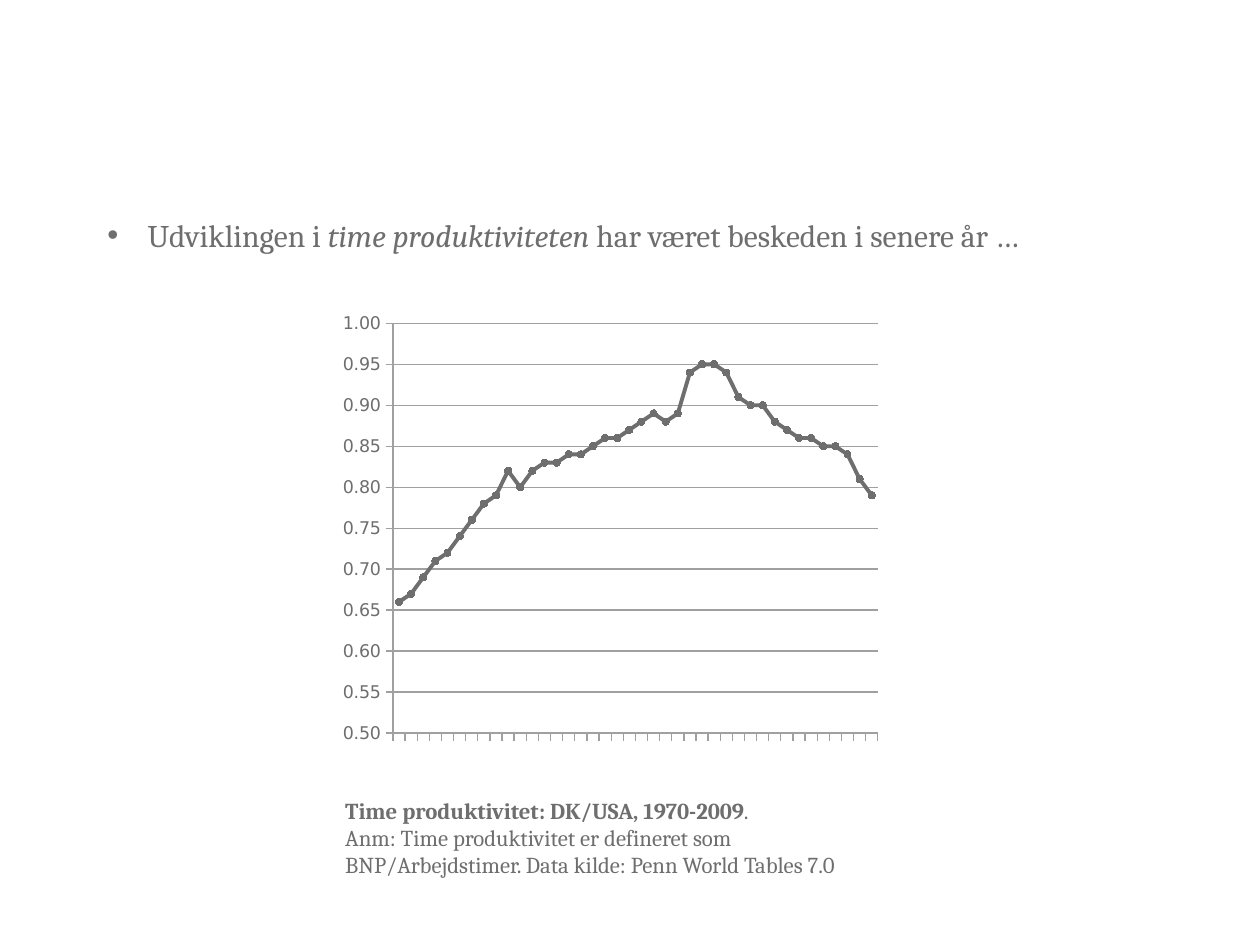
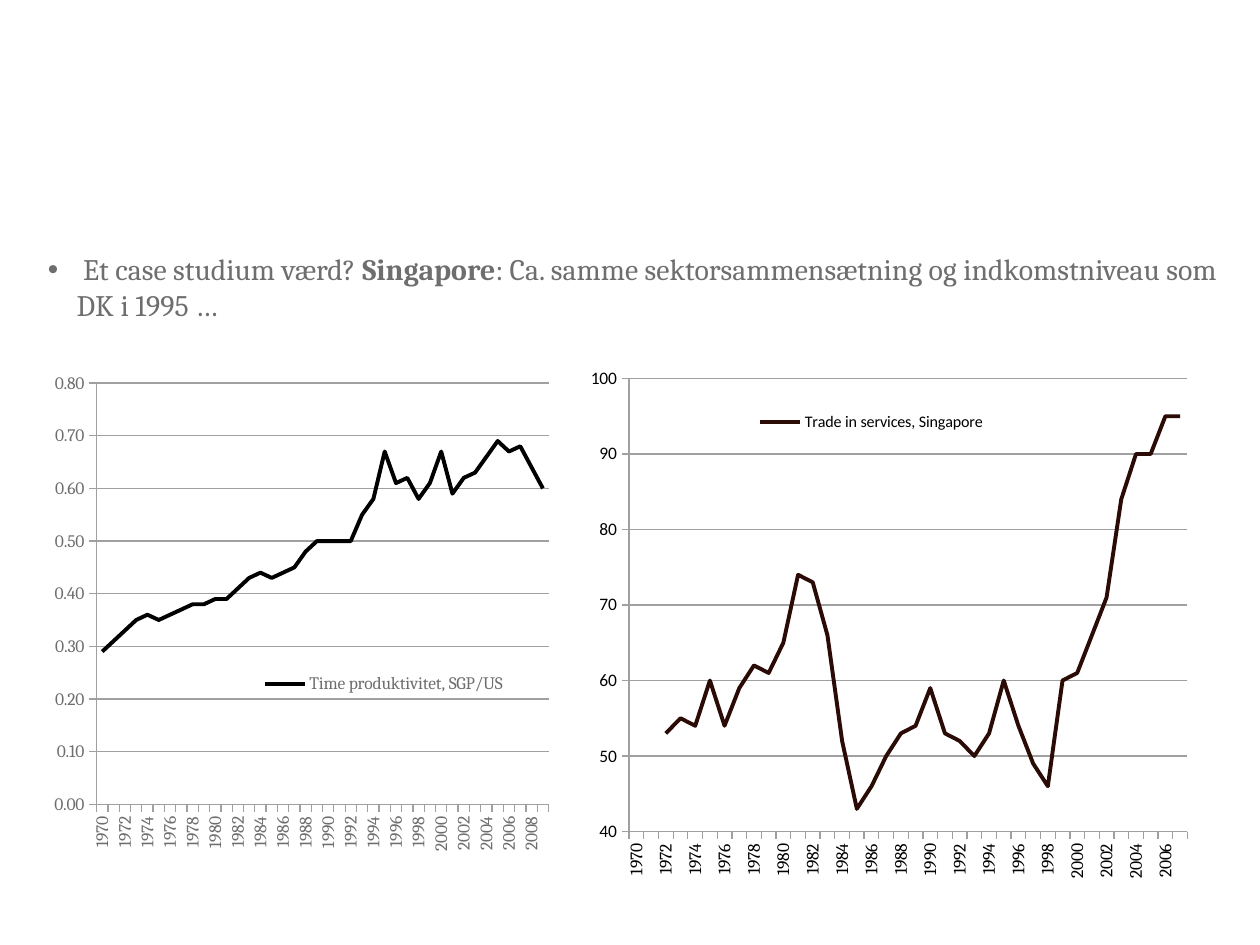
from dataclasses import dataclass
from typing import NamedTuple, Optional

from lxml import etree
from pptx import Presentation
from pptx.chart.axis import CategoryAxis, ValueAxis
from pptx.chart.chart import Chart
from pptx.chart.data import CategoryChartData
from pptx.dml.color import RGBColor
from pptx.enum.chart import (XL_CHART_TYPE, XL_LEGEND_POSITION, XL_MARKER_STYLE,
                             XL_TICK_LABEL_POSITION, XL_TICK_MARK)
from pptx.enum.text import MSO_AUTO_SIZE
from pptx.oxml.ns import qn
from pptx.slide import Slide
from pptx.text.text import Font, TextFrame
from pptx.util import Cm, Pt

LINE, LINE_MARKERS = XL_CHART_TYPE.LINE, XL_CHART_TYPE.LINE_MARKERS
LEGEND_RIGHT = XL_LEGEND_POSITION.RIGHT
CIRCLE = XL_MARKER_STYLE.CIRCLE
NO_LABELS = XL_TICK_LABEL_POSITION.NONE
LOW_LABELS = XL_TICK_LABEL_POSITION.LOW
TICK_OUT = XL_TICK_MARK.OUTSIDE
FIXED_SIZE = MSO_AUTO_SIZE.NONE

TITLE_AND_CONTENT = 1
FIRST_YEAR = 1970


@dataclass(frozen=True)
class Theme:
    grey: RGBColor = RGBColor(0x6E, 0x6E, 0x6F)
    grid: RGBColor = RGBColor(0xA0, 0xA0, 0xA0)
    black: RGBColor = RGBColor(0, 0, 0)
    maroon: RGBColor = RGBColor(0x2B, 0x0B, 0x06)
    serif: str = "Cambria"
    sans: str = "Calibri"
    plain: str = "DejaVu Sans"
    lead_size: float = 18
    long_lead_size: float = 17
    caption_size: float = 13
    axis_size: float = 10
    legend_size: float = 9.2
    curve_width: float = 2.25
    grid_width: float = 0.75


THEME = Theme()


class Box(NamedTuple):
    """Place on the slide, in centimetres."""
    left: float
    top: float
    width: float
    height: float


class Share(NamedTuple):
    """Place within a chart, as fractions of its size."""
    x: float
    y: float
    w: float
    h: float


class Run(NamedTuple):
    text: str
    bold: bool = False
    italic: bool = False


class Scale(NamedTuple):
    low: float
    high: float
    step: float
    number_format: str


@dataclass(frozen=True)
class Lead:
    """The bulleted statement above the charts."""
    box: Box
    size: float
    indent: float
    runs: tuple[Run, ...]


@dataclass(frozen=True)
class Curve:
    name: str
    values: tuple[Optional[float], ...]
    box: Box
    plot: Share
    scale: Scale
    color: RGBColor
    text_color: RGBColor
    font: str
    markers: bool = False
    legend: Optional[Share] = None
    legend_size: float = THEME.axis_size


HOURLY_LEAD = Lead(
    Box(1.91, 4.22, 19.41, 1.02), THEME.lead_size, 0.81,
    (Run("Udviklingen i "), Run("time produktiviteten ", italic=True),
     Run("har været beskeden i senere år …")))

SINGAPORE_LEAD = Lead(
    Box(0.71, 4.93, 24.21, 1.7), THEME.long_lead_size, 0.58,
    (Run(" Et case studium værd? "), Run("Singapore", bold=True),
     Run(": Ca. samme sektorsammensætning og indkomstniveau som DK i 1995 …")))

CAPTION_BOX = Box(6.71, 15.93, 11, 1.93)
CAPTION = (
    (Run("Time produktivitet: DK/USA, 1970-2009", bold=True), Run(".")),
    (Run("Anm: Time produktivitet er defineret som BNP/Arbejdstimer. "
         "Data kilde: Penn World Tables 7.0"),),
)

DENMARK = Curve(
    "Series 1",
    (0.66, 0.67, 0.69, 0.71, 0.72, 0.74, 0.76, 0.78, 0.79, 0.82,
     0.80, 0.82, 0.83, 0.83, 0.84, 0.84, 0.85, 0.86, 0.86, 0.87,
     0.88, 0.89, 0.88, 0.89, 0.94, 0.95, 0.95, 0.94, 0.91, 0.90,
     0.90, 0.88, 0.87, 0.86, 0.86, 0.85, 0.85, 0.84, 0.81, 0.79),
    Box(6.91, 6.32, 10.8, 9.4), Share(0.09, 0.02, 0.91, 0.88),
    Scale(0.5, 1, 0.05, "0.00"),
    THEME.grey, THEME.grey, THEME.plain, markers=True)

SINGAPORE = Curve(
    "Time produktivitet, SGP/US",
    (0.29, 0.31, 0.33, 0.35, 0.36, 0.35, 0.36, 0.37, 0.38, 0.38,
     0.39, 0.39, 0.41, 0.43, 0.44, 0.43, 0.44, 0.45, 0.48, 0.50,
     0.50, 0.50, 0.50, 0.55, 0.58, 0.67, 0.61, 0.62, 0.58, 0.61,
     0.67, 0.59, 0.62, 0.63, 0.66, 0.69, 0.67, 0.68, 0.64, 0.60),
    Box(1.09, 7.32, 10.72, 10.11), Share(0.08, 0.04, 0.85, 0.84),
    Scale(0, 0.8, 0.1, "0.00"),
    THEME.black, THEME.grey, THEME.serif, legend=Share(0.38, 0.61, 0.48, 0.06))

SERVICES = Curve(
    "Trade in services, Singapore",
    (None, None, 53, 55, 54, 60, 54, 59, 62, 61,
     65, 74, 73, 66, 52, 43, 46, 50, 53, 54,
     59, 53, 52, 50, 53, 60, 54, 49, 46, 60,
     61, 66, 71, 84, 90, 90, 95, 95),
    Box(11.91, 7.32, 12.4, 10.39), Share(0.06, 0.03, 0.91, 0.88),
    Scale(40, 100, 10, "0"),
    THEME.maroon, THEME.black, THEME.sans, legend=Share(0.26, 0.09, 0.39, 0.05),
    legend_size=THEME.legend_size)


def in_cm(box: Box) -> tuple[Cm, ...]:
    return tuple(Cm(length) for length in box)


def style_font(font: Font, name: str, size: float, color: RGBColor) -> None:
    font.name = name
    font.size = Pt(size)
    font.color.rgb = color


def write_paragraphs(frame: TextFrame, paragraphs: tuple[tuple[Run, ...], ...],
                     size: float) -> None:
    frame.word_wrap = True
    frame.auto_size = FIXED_SIZE
    for index, runs in enumerate(paragraphs):
        paragraph = frame.paragraphs[0] if index == 0 else frame.add_paragraph()
        paragraph.space_before = Pt(0)
        style_font(paragraph.font, THEME.serif, size, THEME.grey)
        for part in runs:
            run = paragraph.add_run()
            run.text = part.text
            if part.bold:
                run.font.bold = True
            if part.italic:
                run.font.italic = True


def add_lead_slide(deck: Presentation, lead: Lead) -> Slide:
    """Add a slide without a title whose body placeholder holds the statement."""
    slide = deck.slides.add_slide(deck.slide_layouts[TITLE_AND_CONTENT])
    title = slide.shapes.title.element
    title.getparent().remove(title)
    body = slide.placeholders[1]
    body.left, body.top, body.width, body.height = in_cm(lead.box)
    write_paragraphs(body.text_frame, (lead.runs,), lead.size)
    properties = body.text_frame.paragraphs[0]._p.get_or_add_pPr()
    properties.set("marL", str(Cm(lead.indent)))
    properties.set("indent", str(-Cm(lead.indent)))
    return slide


def set_layout(parent: etree._Element, position: int, share: Share,
               inner: bool = False) -> None:
    """Fix the place of a chart part by a manual layout."""
    for old in parent.findall(qn("c:layout")):
        parent.remove(old)
    layout = etree.Element(qn("c:layout"))
    manual = etree.SubElement(layout, qn("c:manualLayout"))
    settings = [("layoutTarget", "inner")] if inner else []
    settings += [("xMode", "edge"), ("yMode", "edge")]
    settings += [(key, str(value)) for key, value in share._asdict().items()]
    for key, value in settings:
        etree.SubElement(manual, qn(f"c:{key}")).set("val", value)
    parent.insert(position, layout)


def style_year_axis(axis: CategoryAxis, curve: Curve) -> None:
    axis.major_tick_mark = TICK_OUT
    axis.format.line.color.rgb = THEME.grid
    axis.format.line.width = Pt(THEME.grid_width)
    if curve.legend is None:
        axis.tick_label_position = NO_LABELS
        return
    axis.tick_label_position = LOW_LABELS
    style_font(axis.tick_labels.font, THEME.serif, THEME.axis_size, curve.text_color)
    body = axis._element.find(qn("c:txPr")).find(qn("a:bodyPr"))
    body.set("rot", "-5400000")
    body.set("vert", "horz")
    last = axis._element.find(qn("c:noMultiLvlLbl"))
    for key, count in (("tickLblSkip", 2), ("tickMarkSkip", 1)):
        skip = etree.Element(qn(f"c:{key}"))
        skip.set("val", str(count))
        last.addprevious(skip)


def style_value_axis(axis: ValueAxis, scale: Scale) -> None:
    axis.minimum_scale, axis.maximum_scale = scale.low, scale.high
    axis.major_unit = scale.step
    axis.major_tick_mark = TICK_OUT
    axis.has_major_gridlines = True
    axis.tick_labels.number_format = scale.number_format
    axis.tick_labels.number_format_is_linked = False
    for line in (axis.format.line, axis.major_gridlines.format.line):
        line.color.rgb = THEME.grid
        line.width = Pt(THEME.grid_width)


def add_legend(chart: Chart, curve: Curve) -> None:
    chart.has_legend = curve.legend is not None
    if curve.legend is None:
        return
    legend = chart.legend
    legend.position = LEGEND_RIGHT
    legend.include_in_layout = False
    style_font(legend.font, curve.font, curve.legend_size, curve.text_color)
    set_layout(legend._element, 1, curve.legend)


def add_curve(slide: Slide, curve: Curve) -> None:
    data = CategoryChartData()
    data.categories = [str(FIRST_YEAR + n) for n in range(len(curve.values))]
    data.add_series(curve.name, curve.values)
    kind = LINE_MARKERS if curve.markers else LINE
    chart = slide.shapes.add_chart(kind, *in_cm(curve.box), data).chart
    chart.has_title = False
    style_font(chart.font, curve.font, THEME.axis_size, curve.text_color)
    style_year_axis(chart.category_axis, curve)
    style_value_axis(chart.value_axis, curve.scale)
    add_legend(chart, curve)

    plot = chart.plots[0]
    plot.vary_by_categories = False
    series = plot.series[0]
    series.smooth = False
    series.format.line.color.rgb = curve.color
    series.format.line.width = Pt(THEME.curve_width)
    if curve.markers:
        series.marker.style = CIRCLE
        series.marker.size = 4
        series.marker.format.fill.solid()
        series.marker.format.fill.fore_color.rgb = curve.color
        series.marker.format.line.color.rgb = curve.color
    set_layout(chart._chartSpace.find(".//" + qn("c:plotArea")), 0, curve.plot, inner=True)


def main() -> None:
    deck = Presentation()
    deck.slide_width, deck.slide_height = Cm(25.4), Cm(19.05)

    hourly = add_lead_slide(deck, HOURLY_LEAD)
    add_curve(hourly, DENMARK)
    caption = hourly.shapes.add_textbox(*in_cm(CAPTION_BOX))
    write_paragraphs(caption.text_frame, CAPTION, THEME.caption_size)

    case_study = add_lead_slide(deck, SINGAPORE_LEAD)
    for curve in (SINGAPORE, SERVICES):
        add_curve(case_study, curve)

    deck.save("out.pptx")


if __name__ == "__main__":
    main()
